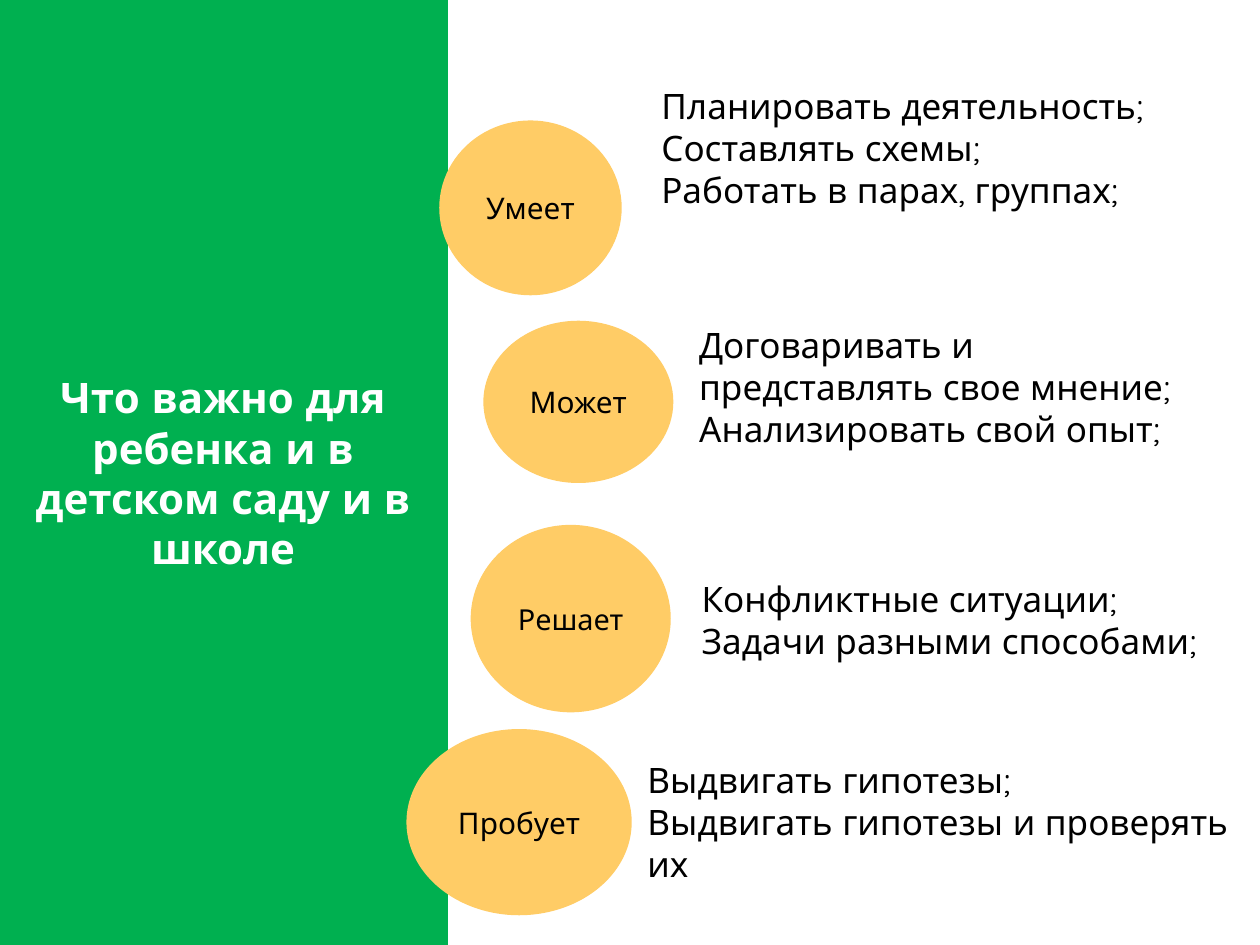
"""Build the slide on what matters for a child in kindergarten and at school."""
from dataclasses import dataclass

from lxml.etree import SubElement
from pptx import Presentation
from pptx.dml.color import RGBColor
from pptx.enum.shapes import MSO_SHAPE
from pptx.enum.text import MSO_ANCHOR, MSO_AUTO_SIZE, PP_ALIGN
from pptx.oxml.ns import qn
from pptx.util import Inches, Pt


@dataclass(frozen=True)
class Theme:
    font: str = "Quicksand"
    green: str = "00B050"
    amber: str = "FFCC66"
    white: str = "FFFFFF"
    black: str = "000000"
    title: float = 24
    label: float = 17
    small_label: float = 16.5
    body: float = 20
    outline: float = 2


THEME = Theme()
WIDTH, HEIGHT = 10, 7.5
TITLE = "Что важно для ребенка и в детском саду и в школе"
TITLE_BOX = (0, 0, 3.54, HEIGHT)
SKILLS = [
    {"label": "Умеет", "size": THEME.label,
     "circle": (3.5, 0.97, 1.42, 1.36), "box": (5.15, 0.6, 4.88, 1.14),
     "lines": ["Планировать деятельность;", "Составлять схемы;",
               "Работать в парах, группах;"]},
    {"label": "Может", "size": THEME.label,
     "circle": (3.85, 2.56, 1.48, 1.26), "box": (5.45, 2.43, 4.25, 1.27),
     "lines": ["Договаривать и представлять свое мнение;",
               "Анализировать свой опыт;"]},
    {"label": "Решает", "size": THEME.small_label,
     "circle": (3.75, 4.18, 1.56, 1.46), "box": (5.47, 4.51, 4.53, 0.81),
     "lines": ["Конфликтные ситуации;", "Задачи разными способами;"]},
    {"label": "Пробует", "size": THEME.label,
     "circle": (3.24, 5.8, 1.76, 1.45), "box": (5.04, 5.95, 4.96, 1.14),
     "lines": ["Выдвигать гипотезы;", "Выдвигать гипотезы и проверять их"]},
]


def apply(target, **values):
    for name, value in values.items():
        setattr(target, name, value)


def inches(box):
    return [Inches(v) for v in box]


def paint(sp, color):
    rgb = RGBColor.from_string(color)
    sp.fill.solid()
    sp.fill.fore_color.rgb = rgb
    sp.line.color.rgb = rgb
    sp.line.width = Pt(THEME.outline)


def write(sp, lines, size, color, align, bold=False):
    tf = sp.text_frame
    apply(tf, word_wrap=True, auto_size=MSO_AUTO_SIZE.NONE,
          vertical_anchor=MSO_ANCHOR.MIDDLE)
    for i, line in enumerate(lines):
        p = tf.add_paragraph() if i else tf.paragraphs[0]
        p.alignment = align
        r = p.add_run()
        r.text = line
        apply(r.font, name=THEME.font, size=Pt(size), bold=bold)
        r.font.color.rgb = RGBColor.from_string(color)


def add_title(s):
    sp = s.shapes.title
    apply(sp, **dict(zip(("left", "top", "width", "height"), inches(TITLE_BOX))))
    geom = SubElement(sp._element.spPr, qn("a:prstGeom"), prst="flowChartDelay")
    SubElement(geom, qn("a:avLst"))
    paint(sp, THEME.green)
    write(sp, [TITLE], THEME.title, THEME.white, PP_ALIGN.CENTER, bold=True)


def add_skill(s, skill):
    circle = s.shapes.add_shape(MSO_SHAPE.OVAL, *inches(skill["circle"]))
    circle.shadow.inherit = False
    paint(circle, THEME.amber)
    write(circle, [skill["label"]], skill["size"], THEME.black, PP_ALIGN.CENTER)
    box = s.shapes.add_textbox(*inches(skill["box"]))
    write(box, skill["lines"], THEME.body, THEME.black, PP_ALIGN.LEFT)


def main():
    prs = Presentation()
    apply(prs, slide_width=Inches(WIDTH), slide_height=Inches(HEIGHT))
    s = prs.slides.add_slide(prs.slide_layouts.get_by_name("Title Only"))
    add_title(s)
    for skill in SKILLS:
        add_skill(s, skill)
    prs.save("out.pptx")


if __name__ == "__main__":
    main()
